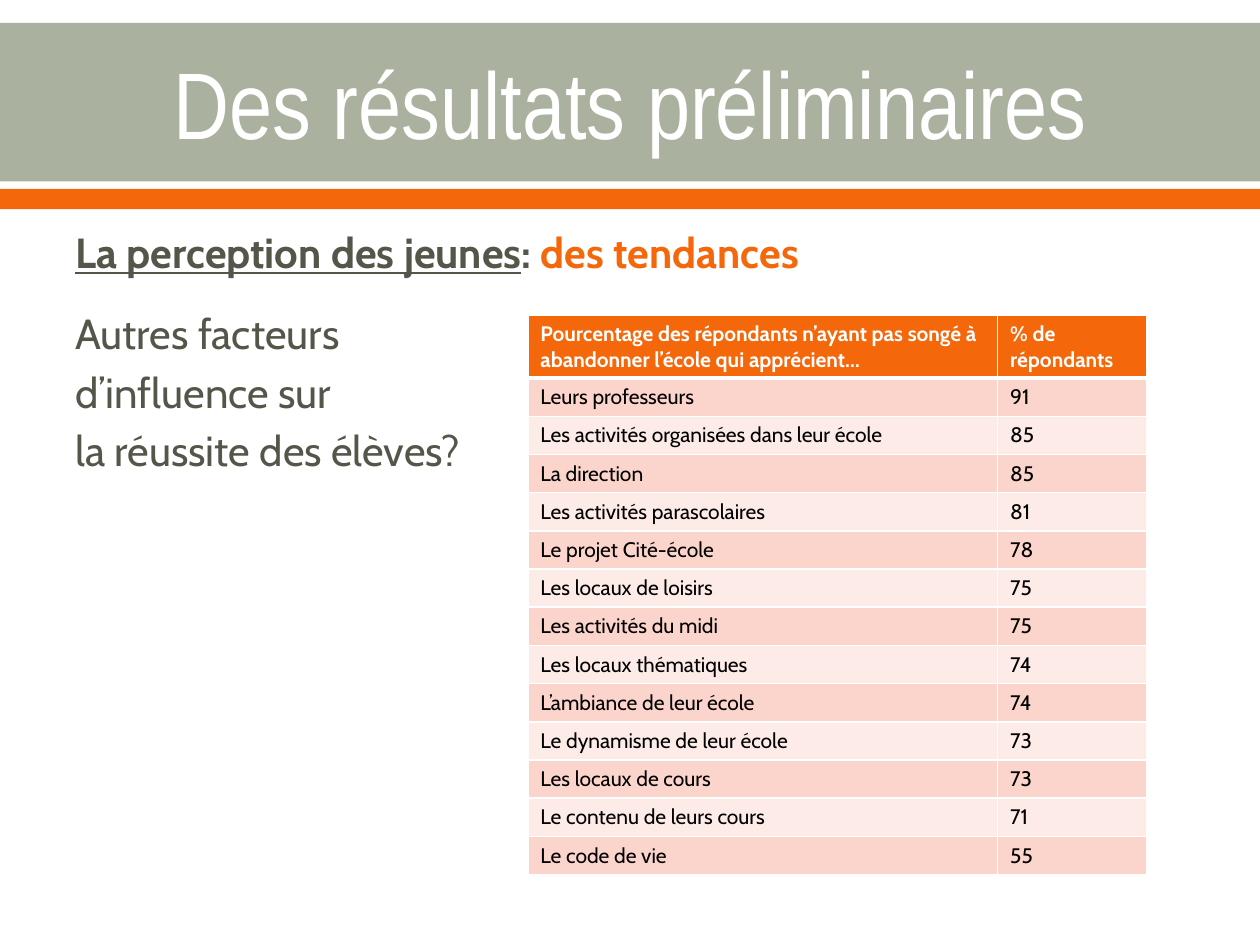
from pptx import Presentation
from pptx.dml.color import RGBColor
from pptx.enum.shapes import MSO_SHAPE
from pptx.enum.text import MSO_ANCHOR, MSO_AUTO_SIZE, PP_ALIGN
from pptx.oxml.ns import qn
from pptx.util import Cm, Pt
from lxml.etree import SubElement

WHITE = RGBColor(0xFF, 0xFF, 0xFF)
BLACK = RGBColor(0, 0, 0)
SAGE = RGBColor(0xAB, 0xB1, 0x9F)
ORANGE = RGBColor(0xF4, 0x68, 0x0B)
OLIVE = RGBColor(0x55, 0x55, 0x4A)
ROSE = RGBColor(0xFB, 0xD4, 0xCC)
BLUSH = RGBColor(0xFD, 0xEB, 0xE7)

HEAD = ("Pourcentage des répondants n’ayant pas songé à abandonner l’école qui apprécient…",
        "% de répondants")
RATES = [
    ("Leurs professeurs", 91),
    ("Les activités organisées dans leur école", 85),
    ("La direction", 85),
    ("Les activités parascolaires", 81),
    ("Le projet Cité-école", 78),
    ("Les locaux de loisirs", 75),
    ("Les activités du midi", 75),
    ("Les locaux thématiques", 74),
    ("L’ambiance de leur école", 74),
    ("Le dynamisme de leur école", 73),
    ("Les locaux de cours", 73),
    ("Le contenu de leurs cours", 71),
    ("Le code de vie", 55),
]


class Deck:
    styles = {
        "title": {"name": "Arial Narrow", "size": Pt(54), "bold": False},
        "lead": {"name": "Cabin", "size": Pt(24), "bold": True},
        "body": {"name": "Cabin", "size": Pt(24), "bold": False},
        "head": {"name": "Cabin", "size": Pt(12), "bold": True},
        "cell": {"name": "Cabin", "size": Pt(12), "bold": False},
    }

    def __init__(self):
        self.file = Presentation()
        self.file.slide_width, self.file.slide_height = Cm(25.4), Cm(19.05)
        self.slide = self.file.slides.add_slide(self.file.slide_layouts[5])
        self.shapes = self.slide.shapes

    def words(self, para, text, style, color, **extra):
        run = para.add_run()
        run.text = text
        for key, value in {**self.styles[style], **extra}.items():
            setattr(run.font, key, value)
        run.font.color.rgb = color

    def bar(self, top, height, color):
        bar = self.shapes.add_shape(MSO_SHAPE.RECTANGLE, 0, Cm(top), Cm(25.4), Cm(height))
        bar.shadow.inherit = False
        bar.fill.solid()
        bar.fill.fore_color.rgb = color
        bar.line.fill.background()

    def title(self, text, left, top, width, height):
        title = self.shapes.title
        place = {"left": left, "top": top, "width": width, "height": height}
        for key, value in place.items():
            setattr(title, key, Cm(value))
        frame = title.text_frame
        form = {"vertical_anchor": MSO_ANCHOR.MIDDLE, "auto_size": MSO_AUTO_SIZE.NONE,
                "word_wrap": True}
        for key, value in form.items():
            setattr(frame, key, value)
        para = frame.paragraphs[0]
        para.alignment = PP_ALIGN.CENTER
        self.words(para, text, "title", WHITE)
        self.shapes._spTree.append(title._element)

    def text(self, paras, left, top, width, height):
        box = self.shapes.add_textbox(Cm(left), Cm(top), Cm(width), Cm(height))
        frame = box.text_frame
        frame.word_wrap = True
        for i, (gap, runs) in enumerate(paras):
            para = frame.add_paragraph() if i else frame.paragraphs[0]
            para.space_before = Pt(gap)
            for text, style, color, extra in runs:
                self.words(para, text, style, color, **extra)

    def edge(self, cell, sides):
        props = cell._tc.get_or_add_tcPr()
        for i, (side, width) in enumerate(sides.items()):
            line = SubElement(props, qn(f"a:{side}"), w=str(Pt(width)))
            fill = SubElement(line, qn("a:solidFill"))
            SubElement(fill, qn("a:srgbClr"), val=str(WHITE))
            props.remove(line)
            props.insert(i, line)

    def table(self, rows, left, top, widths, first, pitch):
        height = first + pitch * (len(rows) - 1)
        table = self.shapes.add_table(len(rows), len(widths), Cm(left), Cm(top),
                                      Cm(sum(widths)), Cm(height)).table
        for col, width in zip(table.columns, widths):
            col.width = Cm(width)
        for r, row in enumerate(rows):
            table.rows[r].height = Cm(pitch if r else first)
            shade = (ROSE if r % 2 else BLUSH) if r else ORANGE
            style, color = ("cell", BLACK) if r else ("head", WHITE)
            sides = {"lnL": 1, "lnR": 1, "lnT": 3 if r == 1 else 1, "lnB": 1 if r else 3}
            for c, value in enumerate(row):
                cell = table.cell(r, c)
                cell.fill.solid()
                cell.fill.fore_color.rgb = shade
                self.edge(cell, sides)
                self.words(cell.text_frame.paragraphs[0], str(value), style, color)


def main():
    deck = Deck()
    deck.bar(0.46, 3.2, SAGE)
    deck.bar(3.81, 0.41, ORANGE)
    deck.title("Des résultats préliminaires", 1.27, 0.51, 22.86, 3.1)
    lead = [
        ("La perception des jeunes", "lead", OLIVE, {"underline": True}),
        (": ", "lead", OLIVE, {}),
        ("des tendances", "lead", ORANGE, {}),
    ]
    asks = [(17.2, "Autres facteurs"), (4.8, "d’influence sur"),
            (4.8, "la réussite des élèves?")]
    paras = [(0, lead)] + [(gap, [(text, "body", OLIVE, {})]) for gap, text in asks]
    deck.text(paras, 1.27, 4.45, 23.62, 12.57)
    deck.table([HEAD, *RATES], 10.64, 6.35, (9.47, 3), 1.27, 0.77)
    deck.file.save("out.pptx")


if __name__ == "__main__":
    main()
